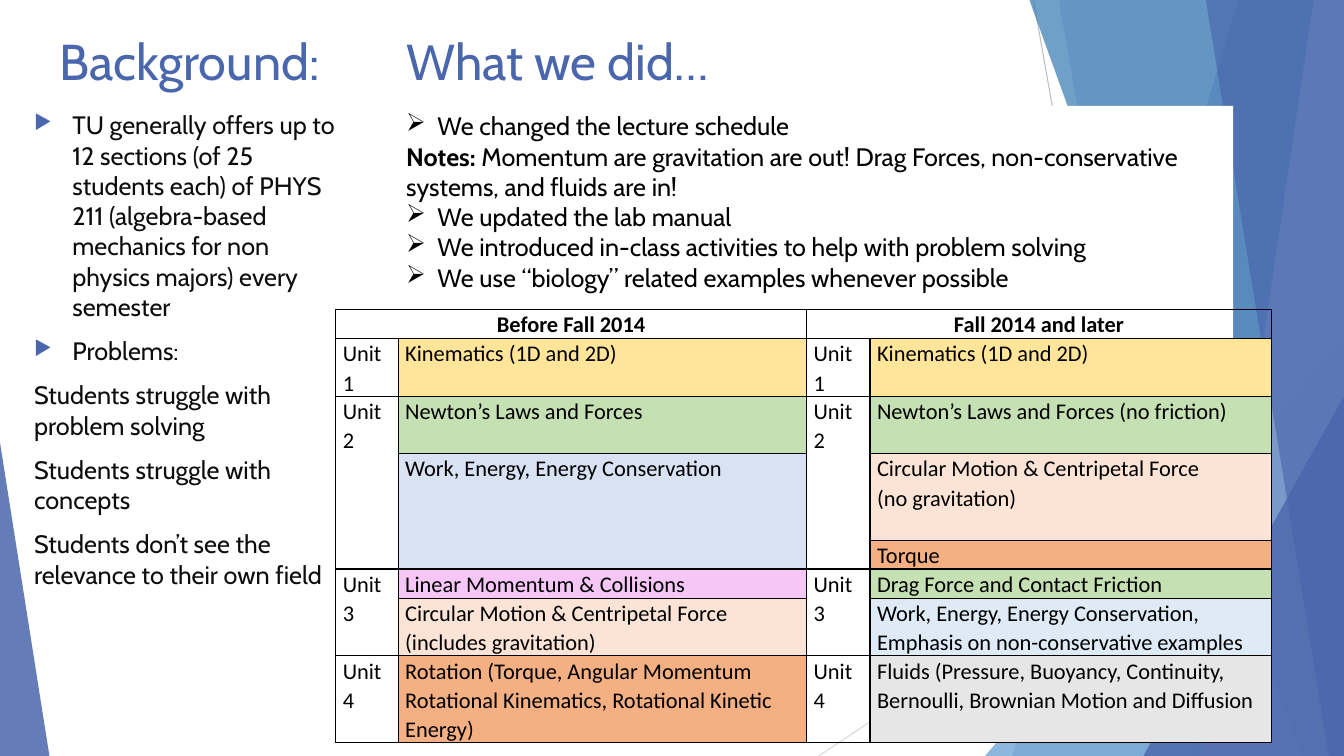
from lxml.etree import SubElement
from pptx import Presentation
from pptx.dml.color import RGBColor
from pptx.enum.shapes import MSO_CONNECTOR as Connector, MSO_SHAPE as Preset
from pptx.enum.text import MSO_ANCHOR as Anchor, PP_ALIGN as Align
from pptx.oxml.ns import qn
from pptx.util import Pt

PX = 9144
WIDTH, HEIGHT = 1333, 750
BLUE, BLACK, INK = "4A66AC", "000000", "0D0D0D"

SKY_LINES = [((1025, 0, 1158, 750), "BFBFBF"), ((1333, 403, 812, 750), "D9D9D9")]
RIGHT_FACETS = [
    ("band", (1228, 1004), BLUE, 30),
    ("band", (1050, 1183), BLUE, 20),
    ("triangle", (977, 333, 356, 417), "629DD1", 72),
    ("band", (1021, 1291), "3477B2", 70),
    ("band", (1303, 1192), "90A2CF", 70),
    ("band", (1196, 1318), BLUE, 65),
    ("triangle", (1134, 393, 199, 357), BLUE, 80),
]

PROBLEMS = [
    ("▶", "TU generally offers up to 12 sections (of 25 students each) of PHYS 211 "
          "(algebra-based mechanics for non physics majors) every semester"),
    ("▶", "Problems:"),
    (None, "Students struggle with problem solving"),
    (None, "Students struggle with concepts"),
    (None, "Students don’t see the relevance to their own field"),
]
CHANGES = [
    ("➢", "We changed the lecture schedule"),
    (None, "Momentum are gravitation are out! Drag Forces, non-conservative systems, "
           "and fluids are in!"),
    ("➢", "We updated the lab manual"),
    ("➢", "We introduced in-class activities to help with problem solving"),
    ("➢", "We use “biology” related examples whenever possible"),
]

COLUMNS = [62, 405, 63, 398]
ROWS = [29, 57, 57, 86, 28, 29, 57, 86]
MERGES = [(0, 0, 0, 1), (0, 2, 0, 3), (2, 0, 4, 0), (2, 2, 4, 2),
          (3, 1, 4, 1), (5, 0, 6, 0), (5, 2, 6, 2)]
UNIT_ROWS = {1: "Unit 1", 2: "Unit 2", 5: "Unit 3", 7: "Unit 4"}
TOPICS = {
    (1, 1): ("Kinematics (1D and 2D)", "FFE599"),
    (1, 3): ("Kinematics (1D and 2D)", "FFE599"),
    (2, 1): ("Newton’s Laws and Forces", "C5E0B3"),
    (2, 3): ("Newton’s Laws and Forces (no friction)", "C5E0B3"),
    (3, 1): ("Work, Energy, Energy Conservation", "D9E2F3"),
    (3, 3): ("Circular Motion & Centripetal Force\n(no gravitation)", "FBE4D5"),
    (4, 3): ("Torque", "F4B083"),
    (5, 1): ("Linear Momentum & Collisions", "F5C6F6"),
    (5, 3): ("Drag Force and Contact Friction", "C5E0B3"),
    (6, 1): ("Circular Motion & Centripetal Force (includes gravitation)", "FBE4D5"),
    (6, 3): ("Work, Energy, Energy Conservation, Emphasis on non-conservative examples",
             "DEEAF6"),
    (7, 1): ("Rotation (Torque, Angular Momentum\n"
             "Rotational Kinematics, Rotational Kinetic Energy)", "F4B083"),
    (7, 3): ("Fluids (Pressure, Buoyancy, Continuity, Bernoulli, Brownian Motion "
             "and Diffusion", "E7E6E6"),
}


def emu(*lengths):
    """Turn px lengths into EMU."""
    return [length * PX for length in lengths]


def rgb(code):
    """Turn a hex string into a colour."""
    return RGBColor.from_string(code)


def set_font(paragraph, face, size, color, bold=False):
    """Set the font of a whole paragraph."""
    font = paragraph.font
    font.name, font.size, font.bold = face, Pt(size), bold
    font.color.rgb = rgb(color)


def paint(shape, color, opacity=100):
    """Fill a shape with no outline or shadow."""
    shape.shadow.inherit = False
    shape.line.fill.background()
    shape.fill.solid()
    shape.fill.fore_color.rgb = rgb(color)
    if opacity < 100:
        tint = shape._element.spPr.find(".//" + qn("a:srgbClr"))
        SubElement(tint, qn("a:alpha"), val=str(opacity * 1000))


def add_bullet(paragraph, mark, indent, color, percent):
    """Give a paragraph a hanging bullet."""
    props = paragraph._p.get_or_add_pPr()
    props.set("marL", str(indent * PX))
    props.set("indent", str(-indent * PX))
    SubElement(SubElement(props, qn("a:buClr")), qn("a:srgbClr"), val=color)
    SubElement(props, qn("a:buSzPct"), val=str(percent * 1000))
    SubElement(props, qn("a:buChar"), char=mark)


def add_triangle(slide, box, color, opacity, apex):
    """Draw a right triangle whose apex is at the given share of its width."""
    triangle = slide.shapes.add_shape(Preset.ISOSCELES_TRIANGLE, *emu(*box))
    triangle.adjustments[0] = apex
    paint(triangle, color, opacity)


def add_backdrop(slide, width, height):
    """Draw the faceted edges of the slide."""
    for ends, color in SKY_LINES:
        ray = slide.shapes.add_connector(Connector.STRAIGHT, *emu(*ends))
        ray.line.color.rgb = rgb(color)
        ray.line.width = Pt(0.75)
        SubElement(ray._element.spPr, qn("a:effectLst"))
    for kind, place, color, opacity in RIGHT_FACETS:
        if kind == "triangle":
            add_triangle(slide, place, color, opacity, 1)
            continue
        top_x, bottom_x = place
        outline = slide.shapes.build_freeform(top_x, 0, scale=PX)
        outline.add_line_segments([(width, 0), (width, height), (bottom_x, height)])
        paint(outline.convert_to_shape(), color, opacity)
    add_triangle(slide, (0, 439, 49, 311), BLUE, 85, 0)


def add_heading(slide, box, words):
    """Place a section heading."""
    frame = slide.shapes.add_textbox(*emu(*box)).text_frame
    frame.word_wrap = True
    frame.text = words
    set_font(frame.paragraphs[0], "Cabin", 36, BLUE)


def fill_list(frame, items, indent, gap, color, bullet_color, percent, lead=None):
    """Write a list, with a bold lead before unbulleted items if given."""
    frame.word_wrap = True
    frame.vertical_anchor = Anchor.TOP
    for index, (mark, words) in enumerate(items):
        paragraph = frame.add_paragraph() if index else frame.paragraphs[0]
        paragraph.alignment = Align.LEFT
        if mark:
            add_bullet(paragraph, mark, indent, bullet_color, percent)
        elif lead:
            label = paragraph.add_run()
            label.text = lead
            label.font.bold = True
        paragraph.add_run().text = words
        paragraph.space_before = Pt(gap)
        set_font(paragraph, "Cabin", 18, color)


def add_background_list(slide, box):
    """Place the list of background points."""
    frame = slide.shapes.add_textbox(*emu(*box)).text_frame
    fill_list(frame, PROBLEMS, 38, 10, INK, BLUE, 80)


def add_changes_panel(slide, box):
    """Place the white panel listing the changes made."""
    panel = slide.shapes.add_shape(Preset.RECTANGLE, *emu(*box))
    paint(panel, "FFFFFF")
    fill_list(panel.text_frame, CHANGES, 31, 0, BLACK, BLACK, 100, "Notes: ")


def style_cell(cell, color=None):
    """Set the margins, borders and fill of a cell."""
    cell.margin_left = cell.margin_right = 7 * PX
    cell.margin_top = cell.margin_bottom = 0
    for side in ("a:lnL", "a:lnR", "a:lnT", "a:lnB"):
        border = SubElement(cell._tc.get_or_add_tcPr(), qn(side), w=str(Pt(1)))
        ink = SubElement(border, qn("a:solidFill"))
        SubElement(ink, qn("a:srgbClr"), val=BLACK)
    if color:
        cell.fill.solid()
        cell.fill.fore_color.rgb = rgb(color)
    else:
        cell.fill.background()


def add_schedule(slide, left, top):
    """Place the table comparing the two lecture schedules."""
    frame = slide.shapes.add_table(
        len(ROWS), len(COLUMNS), *emu(left, top, sum(COLUMNS), sum(ROWS)))
    schedule = frame.table
    schedule.first_row = schedule.horz_banding = False
    for column, width in zip(schedule.columns, COLUMNS):
        column.width = width * PX
    for row, height in zip(schedule.rows, ROWS):
        row.height = height * PX
    entries = {(0, 0): ("Before Fall 2014", None), (0, 2): ("Fall 2014 and later", None)}
    entries.update({(r, c): (unit, None) for r, unit in UNIT_ROWS.items() for c in (0, 2)})
    entries.update(TOPICS)
    for r in range(len(ROWS)):
        for c in range(len(COLUMNS)):
            words, color = entries.get((r, c), ("", None))
            cell = schedule.cell(r, c)
            style_cell(cell, color)
            cell.text = words
            for paragraph in cell.text_frame.paragraphs:
                paragraph.line_spacing = 1.07
                paragraph.alignment = Align.LEFT if r else Align.CENTER
                set_font(paragraph, "Calibri", 16, BLACK, r == 0)
    for r1, c1, r2, c2 in MERGES:
        schedule.cell(r1, c1).merge(schedule.cell(r2, c2))


def main():
    """Build and save the slide."""
    deck = Presentation()
    deck.slide_width, deck.slide_height = emu(WIDTH, HEIGHT)
    slide = deck.slides.add_slide(deck.slide_layouts[6])
    add_backdrop(slide, WIDTH, HEIGHT)
    add_heading(slide, (49, 25, 308, 81), "Background:")
    add_background_list(slide, (24, 104, 326, 530))
    add_changes_panel(slide, (393, 105, 830, 283))
    add_heading(slide, (393, 25, 940, 144), "What we did…")
    add_schedule(slide, 333, 307)
    deck.save("out.pptx")


if __name__ == "__main__":
    main()
